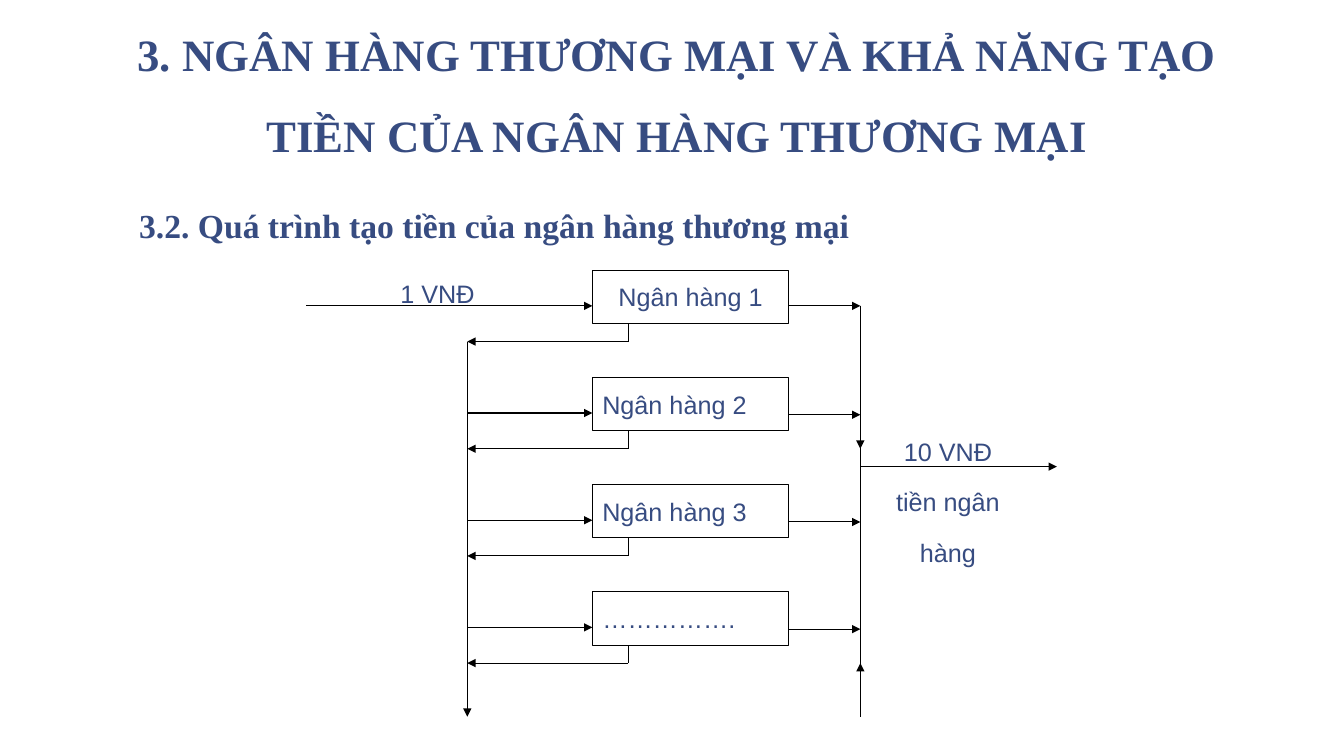
from lxml.etree import SubElement
from pptx import Presentation
from pptx.dml.color import RGBColor
from pptx.enum.shapes import MSO_CONNECTOR, MSO_SHAPE
from pptx.enum.text import MSO_ANCHOR, MSO_AUTO_SIZE, PP_ALIGN
from pptx.oxml.ns import qn
from pptx.util import Inches, Pt

NAVY = RGBColor(0x37, 0x4C, 0x81)
BLACK = RGBColor(0, 0, 0)
WHITE = RGBColor(0xFF, 0xFF, 0xFF)

# Diagram grid: 42 columns by 25 rows of square cells
LEFT, TOP = Inches(3.04), Inches(2.68)
CELL = Inches(4.43) / 25
DEPOSIT, BANK, STEM, BANK_END, TOTAL, RESULT = 9, 16, 18, 27, 31, 42
PITCH, BOX_ROWS, LAST_ROW = 6, 3, 25

HEADING = {"name": "Times New Roman", "bold": True}
LABEL = {"name": "Arial", "size": Pt(18)}

deck = Presentation()
deck.slide_width, deck.slide_height = Inches(13.33), Inches(7.5)
page = deck.slides.add_slide(deck.slide_layouts[1])
page.background.fill.solid()
page.background.fill.fore_color.rgb = WHITE


def write(box, text, font, **layout):
    """Fill the box with one paragraph; layout sets paragraph attributes."""
    box.text_frame.word_wrap = True
    para = box.text_frame.paragraphs[0]
    para.text = text
    for name, value in layout.items():
        setattr(para, name, value)
    for name, value in font.items():
        setattr(para.font, name, value)
    para.font.color.rgb = NAVY
    return para


def draw_line(start, end, arrow=True):
    """Join two (column, row) points of the diagram grid."""
    ends = [int(origin + step * CELL) for point in (start, end)
            for origin, step in zip((LEFT, TOP), point)]
    line = page.shapes.add_connector(MSO_CONNECTOR.STRAIGHT, *ends)
    line.line.color.rgb = BLACK
    line.line.width = Pt(0.75)
    if arrow:
        SubElement(line.line._get_or_add_ln(), qn("a:tailEnd"), type="triangle")
    SubElement(line._element.spPr, qn("a:effectLst"))


# Title and subheading
title, body = page.shapes.title, page.placeholders[1]
for holder, area, anchor in (
    (title, (1.16, 0.25, 11.11, 1.42), MSO_ANCHOR.BOTTOM),
    (body, (1.25, 1.76, 8.25, 4.66), MSO_ANCHOR.TOP),
):
    holder.left, holder.top, holder.width, holder.height = map(Inches, area)
    frame = holder.text_frame
    frame.auto_size = MSO_AUTO_SIZE.NONE
    frame.vertical_anchor = anchor
    frame.margin_left = frame.margin_right = Inches(0.13)
    frame.margin_top = frame.margin_bottom = Inches(0.07)

write(title, "3. NGÂN HÀNG THƯƠNG MẠI VÀ KHẢ NĂNG TẠO TIỀN CỦA NGÂN HÀNG THƯƠNG MẠI",
      HEADING | {"size": Pt(32)}, alignment=PP_ALIGN.CENTER, line_spacing=1.5)

props = body.text_frame.paragraphs[0]._p.get_or_add_pPr()
props.set("marL", "0")
props.set("indent", "0")
SubElement(props, qn("a:buNone"))
write(body, "3.2. Quá trình tạo tiền của ngân hàng thương mại",
      HEADING | {"size": Pt(24)}, alignment=PP_ALIGN.LEFT, line_spacing=1.5,
      space_before=Pt(0))

# Labels of the money going in and coming out
for text, column, row, columns, layout in (
    ("10 VNĐ tiền ngân hàng", 31.9, 7.9, 8,
     {"alignment": PP_ALIGN.CENTER, "line_spacing": Pt(36)}),
    ("1 VNĐ", 4.7, 0.2, 6, {"alignment": PP_ALIGN.LEFT}),
):
    box = page.shapes.add_textbox(
        int(LEFT + column * CELL), int(TOP + row * CELL),
        int(columns * CELL), int(4 * CELL))
    write(box, text, LABEL, **layout)

# Banks, each with money in, a deposit passed on and its share of the total
for index, bank in enumerate(("Ngân hàng 1", "Ngân hàng 2", "Ngân hàng 3", "…………….")):
    row = index * PITCH
    box = page.shapes.add_shape(
        MSO_SHAPE.RECTANGLE, int(LEFT + BANK * CELL), int(TOP + row * CELL),
        int((BANK_END - BANK) * CELL), int(BOX_ROWS * CELL))
    box.shadow.inherit = False
    box.fill.background()
    box.line.color.rgb = BLACK
    box.line.width = Pt(0.75)
    box.text_frame.vertical_anchor = MSO_ANCHOR.MIDDLE
    write(box, bank, LABEL, alignment=PP_ALIGN.LEFT if index else PP_ALIGN.CENTER)

    draw_line((DEPOSIT if index else 0, row + 2), (BANK, row + 2))
    share_row = row + (2.1 if index else 2)
    draw_line((BANK_END, share_row), (TOTAL, share_row))
    draw_line((STEM, row + BOX_ROWS), (STEM, row + 4), arrow=False)
    draw_line((STEM, row + 4), (DEPOSIT, row + 4))

# Deposit trunk, total trunk and the resulting bank money
draw_line((DEPOSIT, 4), (DEPOSIT, LAST_ROW))
draw_line((TOTAL, 2), (TOTAL, LAST_ROW), arrow=False)
draw_line((TOTAL, LAST_ROW), (TOTAL, 22))
draw_line((TOTAL, 2), (TOTAL, 10))
draw_line((TOTAL, 11), (RESULT, 11))

deck.save("out.pptx")
